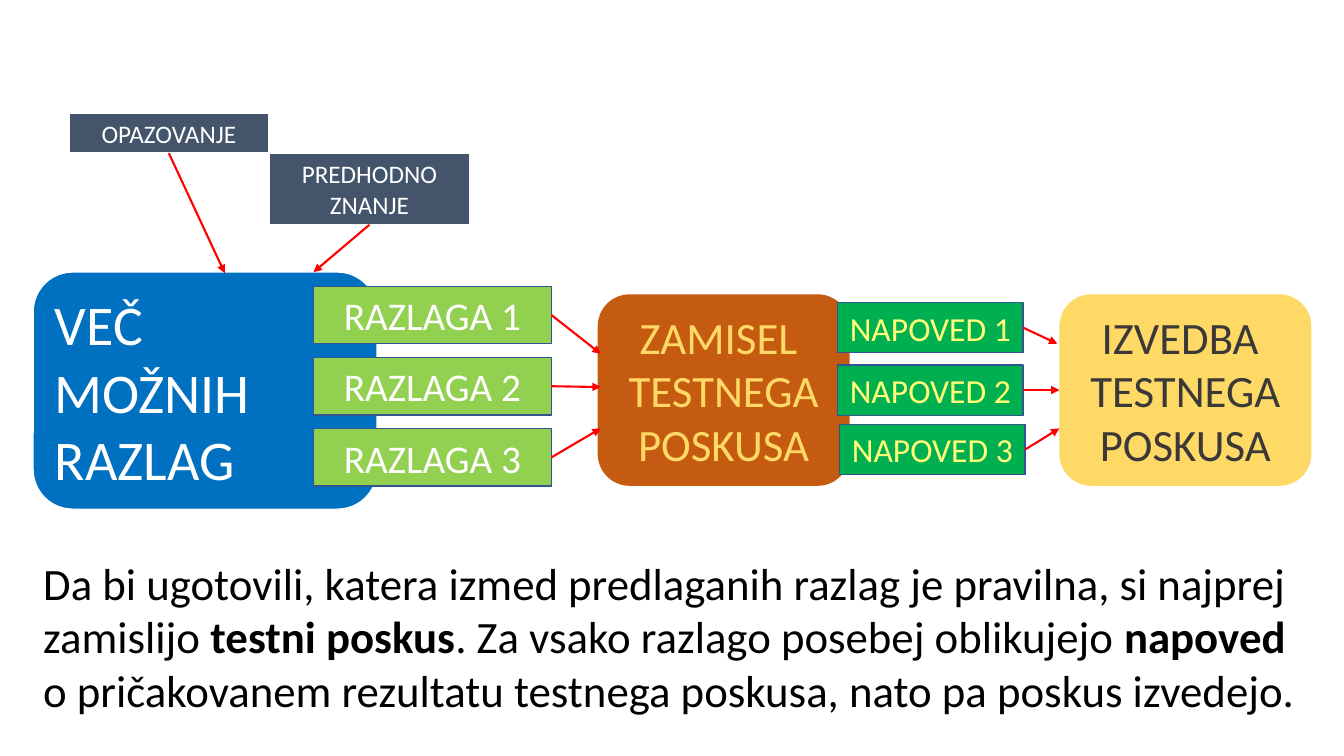
import pptx
import pptx.dml.color
import pptx.enum.shapes
import pptx.enum.text
import pptx.oxml.ns
import pptx.util
from lxml import etree

COLUMNS, ROWS = 40, 22.5
BOTTOM, RIGHT, LEFT = 2, 3, 1
SHAPE = pptx.enum.shapes.MSO_SHAPE
ALIGN = pptx.enum.text.PP_ALIGN


def rgb(value):
    return pptx.dml.color.RGBColor.from_string(value)


def write(tf, paragraphs, size, color, align=ALIGN.CENTER, font="Calibri"):
    """Fill a frame; a paragraph is a string whose ** marks switch bold."""
    tf.word_wrap = True
    tf.auto_size = pptx.enum.text.MSO_AUTO_SIZE.SHAPE_TO_FIT_TEXT
    for i, text in enumerate(paragraphs):
        p = tf.paragraphs[0] if i == 0 else tf.add_paragraph()
        p.alignment = align
        for j, part in enumerate(text.split("**")):
            r = p.add_run()
            r.text = part
            r.font.name = font
            r.font.size = pptx.util.Pt(size)
            r.font.bold = j % 2 == 1
            r.font.color.rgb = rgb(color)


class Diagram:
    """Holds the slide and its style; lengths are grid columns and rows."""

    arrow_color = "FF0000"
    arrow_width = 1.5

    def __init__(self, prs):
        self.s = prs.slides.add_slide(prs.slide_layouts[6])
        self.column = prs.slide_width / COLUMNS
        self.row = prs.slide_height / ROWS

    def place(self, x, y):
        return round(x * self.column), round(y * self.row)

    def box(self, x, y, w, h, paragraphs, fill, size, color="FFFFFF",
            line=None, width=1, shape=SHAPE.RECTANGLE, align=ALIGN.CENTER):
        sp = self.s.shapes.add_shape(shape, *self.place(x, y), *self.place(w, h))
        sp.shadow.inherit = False
        sp.fill.solid()
        sp.fill.fore_color.rgb = rgb(fill)
        if line:
            sp.line.color.rgb = rgb(line)
            sp.line.width = pptx.util.Pt(width)
        else:
            sp.line.fill.background()
        write(sp.text_frame, paragraphs, size, color, align)
        return sp

    def text(self, x, y, w, h, paragraphs, size, color):
        sp = self.s.shapes.add_textbox(*self.place(x, y), *self.place(w, h))
        write(sp.text_frame, paragraphs, size, color, ALIGN.LEFT)

    def arrow(self, source, side, x, y, target=None):
        """Arrow from the middle of a side to a point, or to a target's left."""
        end = self.place(x, y)
        c = self.s.shapes.add_connector(
            pptx.enum.shapes.MSO_CONNECTOR.STRAIGHT, 0, 0, *end)
        c.begin_connect(source, side)
        if target is not None:
            c.end_connect(target, LEFT)
        c.line.color.rgb = rgb(self.arrow_color)
        c.line.width = pptx.util.Pt(self.arrow_width)
        qn = pptx.oxml.ns.qn
        etree.SubElement(c.line._get_or_add_ln(), qn("a:tailEnd"), type="triangle")
        etree.SubElement(c._element.spPr, qn("a:effectLst"))


def main():
    prs = pptx.Presentation()
    prs.slide_width = pptx.util.Inches(13.33)
    prs.slide_height = pptx.util.Inches(7.5)
    d = Diagram(prs)

    source = dict(fill="44546A", size=18, line="FFFFFF", width=1.5)
    observation = d.box(2.04, 3.36, 5.97, 1.2, ["OPAZOVANJE"], **source)
    knowledge = d.box(8.01, 4.56, 5.97, 2.13, ["PREDHODNO ZNANJE"], **source)
    d.box(0.99, 8.1, 10.23, 7.05, ["VEČ", "MOŽNIH", "RAZLAG"], "0070C0", 40,
          line="FFFFFF", width=0.75, shape=SHAPE.ROUNDED_RECTANGLE, align=ALIGN.LEFT)
    explanations = [
        d.box(9.33, 8.52 + 2.12 * i, 7.08, 1.71, [f"RAZLAGA {i + 1}"],
              "92D050", 28, line="325491")
        for i in range(3)]

    stages = []
    for x, word, fill, color in ((17.79, "ZAMISEL ", "C55A11", "FFD966"),
                                 (31.53, "IZVEDBA ", "FFD966", "3B3838")):
        stages.append(d.box(x, 8.76, 7.5, 5.7, [word, "TESTNEGA POSKUSA"], fill, 32,
                            color, shape=SHAPE.ROUNDED_RECTANGLE))
    predictions = [
        d.box(x, y, 5.52, 1.5, [f"NAPOVED {i}"], "00B050", 24, "FFFD78", line="325491")
        for i, (x, y) in enumerate(((24.93, 9), (24.93, 10.86), (24.99, 12.63)), 1)]

    d.arrow(observation, BOTTOM, 6.69, 8.13)
    d.arrow(knowledge, BOTTOM, 9.33, 8.1)
    for explanation, y in zip(explanations, (10.53, 11.52, 12.75)):
        d.arrow(explanation, RIGHT, 17.88, y)
    d.arrow(predictions[0], RIGHT, 31.47, 10.23)
    d.arrow(predictions[1], RIGHT, 31.53, 11.61, stages[1])
    d.arrow(predictions[2], RIGHT, 31.53, 12.75)

    d.text(0.99, 16.38, 38.07, 5.16, [
        "Da bi ugotovili, katera izmed predlaganih razlag je pravilna, si najprej "
        "zamislijo **testni poskus**. Za vsako razlago posebej oblikujejo **napoved** "
        "o pričakovanem rezultatu testnega poskusa, nato pa poskus izvedejo."],
        32, "000000")
    prs.save("out.pptx")


if __name__ == "__main__":
    main()
